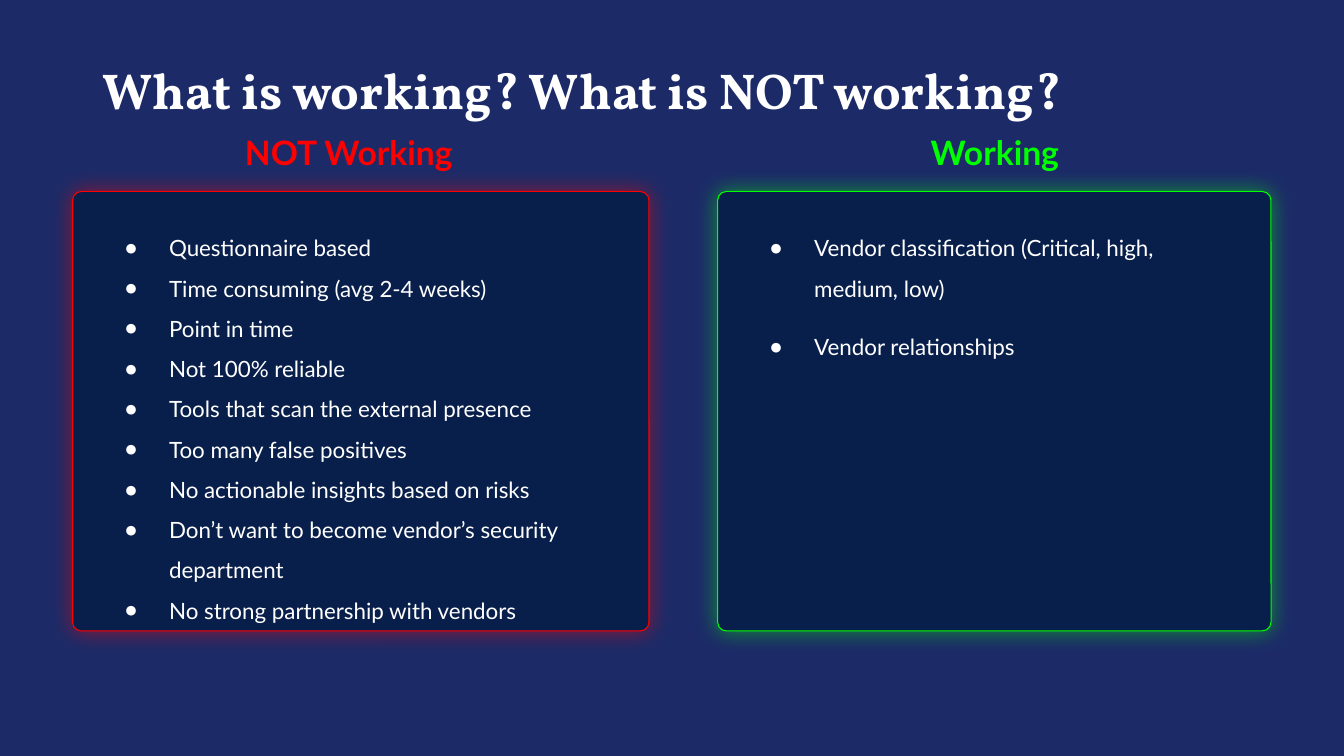
from lxml import etree
from pptx import Presentation
from pptx import util as u
from pptx.dml.color import RGBColor
from pptx.enum import shapes, text
from pptx.oxml import ns

COLORS = {"background": "1C2B68", "panel": "091F4B", "text": "FFFFFF",
          "bad": "FF0000", "good": "00FF00"}
PANEL_TOP, PANEL_HEIGHT = 136.8, 313.9
COLUMNS = [
    {"heading": "NOT Working", "color": "bad", "left": 51.8, "width": 411.8,
     "heading_left": 107.3, "gap": 0,
     "items": ["Questionnaire based", "Time consuming (avg 2-4 weeks)",
               "Point in time", "Not 100% reliable",
               "Tools that scan the external presence",
               "Too many false positives",
               "No actionable insights based on risks",
               "Don’t want to become vendor’s security department",
               "No strong partnership with vendors"]},
    {"heading": "Working", "color": "good", "left": 512.6, "width": 395.3,
     "heading_left": 568.8, "gap": 13,
     "items": ["Vendor classification (Critical, high, medium, low)",
               "Vendor relationships"]},
]


def add_child(parent, tag, **attributes):
    return etree.SubElement(parent, ns.qn(tag), attributes)


def format_box(box, bounds, margins, anchor):
    """Place a placeholder and set its frame; margins are horizontal, vertical."""
    for side, value in zip(("left", "top", "width", "height"), bounds):
        setattr(box, side, u.Pt(value))
    across, down = (u.Pt(margin) for margin in margins)
    frame = {"margin_left": across, "margin_right": across,
             "margin_top": down, "margin_bottom": down,
             "vertical_anchor": anchor, "word_wrap": True,
             "auto_size": text.MSO_AUTO_SIZE.NONE}
    for name, value in frame.items():
        setattr(box.text_frame, name, value)


deck = Presentation()
deck.slide_width, deck.slide_height = u.Pt(960), u.Pt(540)
page = deck.slides.add_slide(deck.slide_layouts.get_by_name("Comparison"))
page.background.fill.solid()
page.background.fill.fore_color.rgb = RGBColor.from_string(COLORS["background"])

# Title
title = page.shapes.title
title.text = "What is working? What is NOT working?"
format_box(title, (66, 14.4, 828, 104.4), (7.2, 3.6), text.MSO_ANCHOR.MIDDLE)
para = title.text_frame.paragraphs[0]
para.alignment, para.line_spacing = text.PP_ALIGN.LEFT, 0.9
for name, value in {"name": "Vollkorn", "size": u.Pt(36), "bold": True}.items():
    setattr(para.font, name, value)
para.font.color.rgb = RGBColor.from_string(COLORS["text"])

for number, column in enumerate(COLUMNS):
    accent = COLORS[column["color"]]
    bounds = (column["left"], PANEL_TOP, column["width"], PANEL_HEIGHT)

    # Glowing panel, placed behind the text
    panel = page.shapes.add_shape(shapes.MSO_SHAPE.ROUNDED_RECTANGLE,
                                  *(u.Pt(value) for value in bounds))
    title.element.addprevious(panel.element)
    panel.adjustments[0] = 0.02
    panel.fill.solid()
    panel.fill.fore_color.rgb = RGBColor.from_string(COLORS["panel"])
    panel.line.color.rgb = RGBColor.from_string(accent)
    panel.line.width = u.Pt(0.75)
    panel.shadow.inherit = False
    effects = panel.element.spPr.find(ns.qn("a:effectLst"))
    glow = add_child(effects, "a:outerShdw", blurRad=str(u.Pt(15.8)), dist="0",
                     dir="0", algn="bl", rotWithShape="0")
    add_child(add_child(glow, "a:srgbClr", val=accent), "a:alpha", val="50000")

    # Heading
    heading = page.placeholders[1 + 2 * number]
    heading.text = column["heading"]
    format_box(heading, (column["heading_left"], 89.3, 283.7, 38.9), (9.4, 9.4),
               text.MSO_ANCHOR.MIDDLE)
    para = heading.text_frame.paragraphs[0]
    para.alignment, para.space_before = text.PP_ALIGN.CENTER, u.Pt(0)
    for name, value in {"name": "Lato", "size": u.Pt(24), "bold": True}.items():
        setattr(para.font, name, value)
    para.font.color.rgb = RGBColor.from_string(accent)

    # List
    body = page.placeholders[2 + 2 * number]
    body.text = "\n".join(column["items"])
    format_box(body, bounds, (21, 21), text.MSO_ANCHOR.TOP)
    for index, para in enumerate(body.text_frame.paragraphs):
        props = para._p.get_or_add_pPr()
        props.set("marL", str(u.Pt(48)))
        props.set("indent", str(u.Pt(-32)))
        add_child(add_child(props, "a:buClr"), "a:srgbClr", val=COLORS["text"])
        add_child(props, "a:buChar", char="●")
        gap = u.Pt(column["gap"] if index else 0)
        for name, value in {"line_spacing": 1.5, "space_before": gap,
                            "space_after": gap}.items():
            setattr(para, name, value)
        para.font.name, para.font.size = "Lato", u.Pt(16)
        para.font.color.rgb = RGBColor.from_string(COLORS["text"])

deck.save("out.pptx")
